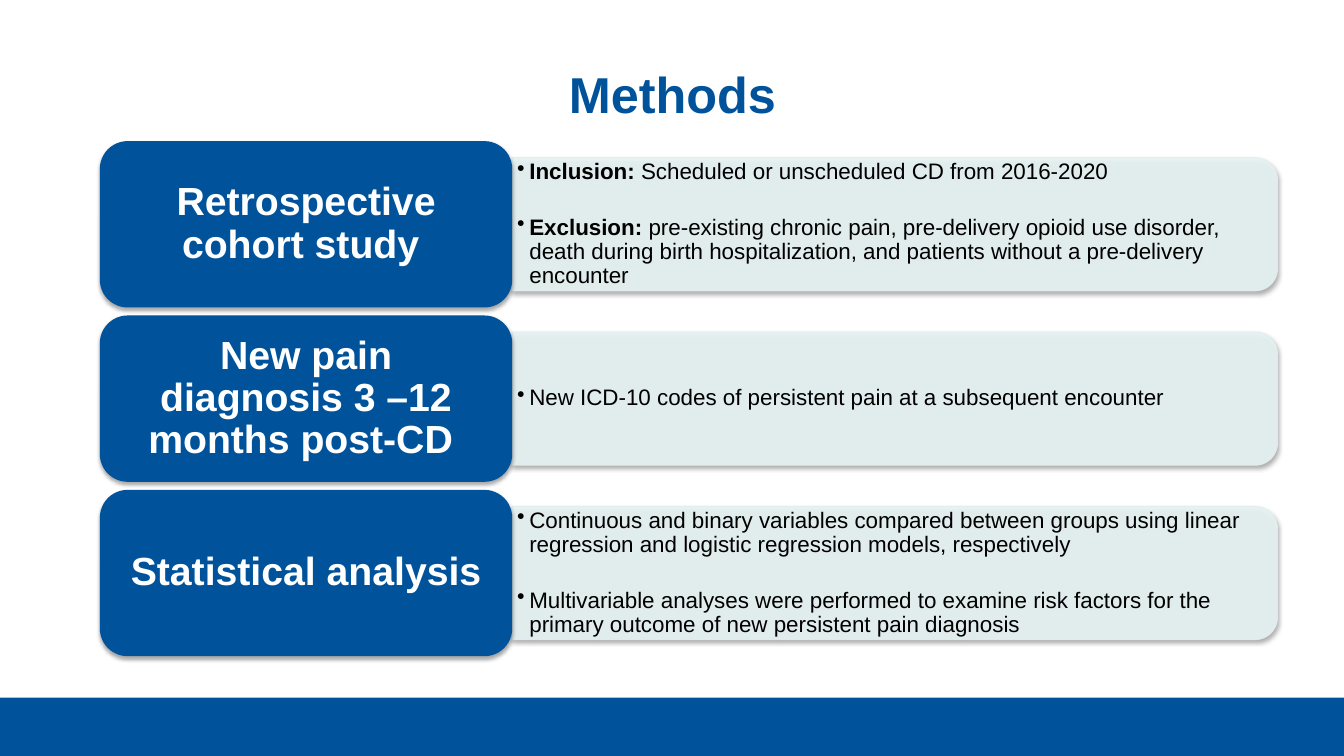
from math import cos, pi, sin

from pptx import Presentation
from pptx.dml.color import RGBColor
from pptx.enum.shapes import MSO_SHAPE
from pptx.enum.text import MSO_ANCHOR, PP_ALIGN
from pptx.oxml import parse_xml
from pptx.oxml.ns import nsdecls, qn
from pptx.util import Inches, Pt

COLORS = {
    "blue": "00539B",
    "panel": "E7F3F4",
    "edge": "E2EEEF",
    "white": "FFFFFF",
    "black": "000000",
}

# Each row: label, then bullets as (bold lead, text)
ROWS = [
    ("Retrospective cohort study ", [
        ("Inclusion: ", "Scheduled or unscheduled CD from 2016-2020"),
        ("Exclusion: ", "pre-existing chronic pain, pre-delivery opioid use disorder, "
                        "death during birth hospitalization, and patients without "
                        "a pre-delivery encounter"),
    ]),
    ("New pain diagnosis 3 –12 months post-CD ", [
        ("", "New ICD-10 codes of persistent pain at a subsequent encounter"),
    ]),
    ("Statistical analysis", [
        ("", "Continuous and binary variables compared between groups using linear "
             "regression and logistic regression models, respectively"),
        ("", "Multivariable analyses were performed to examine risk factors for "
             "the primary outcome of new persistent pain diagnosis"),
    ]),
]

LEFT, TOP, PITCH = 0.99, 1.4, 1.73
LABEL_W, LABEL_H = 4.09, 1.65
PANEL_W, PANEL_H, RADIUS = 7.59, 1.32, 0.22


def apply(obj, formats):
    for name, value in formats.items():
        setattr(obj, name, value)


class SlideBuilder:
    def __init__(self, prs):
        self.slide = prs.slides.add_slide(prs.slide_layouts[5])
        self.font = "Arial"

    def color(self, name):
        return RGBColor.from_string(COLORS[name])

    def run(self, p, text, size, color, bold=False):
        r = p.add_run()
        r.text = text
        apply(r.font, {"name": self.font, "size": Pt(size), "bold": bold})
        r.font.color.rgb = self.color(color)

    def frame(self, sp, insets):
        tf = sp.text_frame
        sides = ("margin_left", "margin_top", "margin_right", "margin_bottom")
        apply(tf, {"word_wrap": True, "vertical_anchor": MSO_ANCHOR.MIDDLE})
        apply(tf, dict(zip(sides, map(Inches, insets))))
        return tf

    def paint(self, sp, fill, edge=None, alpha=None):
        sp.shadow.inherit = False
        sp.fill.solid()
        sp.fill.fore_color.rgb = self.color(fill)
        if edge:
            sp.line.color.rgb = self.color(edge)
            sp.line.width = Pt(0.75)
        else:
            sp.line.fill.background()
        if alpha:
            for clr in sp._element.spPr.iter(qn("a:srgbClr")):
                clr.append(parse_xml(f'<a:alpha {nsdecls("a")} val="{alpha * 1000}"/>'))

    def drop_shadow(self, sp):
        sp._element.spPr.find(qn("a:effectLst")).append(parse_xml(
            f'<a:outerShdw {nsdecls("a")} blurRad="{Pt(3.1)}" dist="{Pt(1.8)}" '
            f'dir="5400000" rotWithShape="0"><a:srgbClr val="{COLORS["black"]}">'
            '<a:alpha val="35000"/></a:srgbClr></a:outerShdw>'))

    def title(self, text):
        sp = self.slide.shapes.title
        apply(sp, {"left": Inches(0.56), "top": Inches(0.3),
                   "width": Inches(12.22), "height": Inches(1.25)})
        tf = self.frame(sp, (0.1, 0.05, 0.1, 0.05))
        p = tf.paragraphs[0]
        p.alignment = PP_ALIGN.CENTER
        self.run(p, text, 36, "blue", True)

    def box(self, kind, x, y, w, h):
        sp = self.slide.shapes.add_shape(kind, *map(Inches, (x, y, w, h)))
        self.paint(sp, "blue")
        return sp

    def label(self, text, x, y):
        sp = self.box(MSO_SHAPE.ROUNDED_RECTANGLE, x, y, LABEL_W, LABEL_H)
        self.drop_shadow(sp)
        p = self.frame(sp, (0.19, 0.13, 0.19, 0.13)).paragraphs[0]
        apply(p, {"alignment": PP_ALIGN.CENTER, "line_spacing": 0.9})
        self.run(p, text, 28, "white", True)

    def panel(self, bullets, x, y):
        # Square left corners, rounded right corners
        right, bottom = x + PANEL_W, y + PANEL_H
        points = [(x, y)]
        for cy, start in ((y + RADIUS, -pi / 2), (bottom - RADIUS, 0)):
            for step in range(13):
                angle = start + step * pi / 24
                points.append((right - RADIUS + RADIUS * cos(angle),
                               cy + RADIUS * sin(angle)))
        points.append((x, bottom))
        points = [(Inches(px), Inches(py)) for px, py in points]
        outline = self.slide.shapes.build_freeform(*points[0])
        outline.add_line_segments(points[1:], close=True)
        sp = outline.convert_to_shape()
        self.paint(sp, "panel", "edge", 90)
        self.drop_shadow(sp)

        # Bulleted text
        tf = self.frame(sp, (0.05, 0.09, 0.11, 0.09))
        for i, (lead, text) in enumerate(bullets):
            p = tf.add_paragraph() if i else tf.paragraphs[0]
            pPr = p._p.get_or_add_pPr()
            pPr.set("marL", str(Inches(0.12)))
            pPr.set("indent", str(-Inches(0.12)))
            pPr.append(parse_xml(f'<a:buChar {nsdecls("a")} char="•"/>'))
            apply(p, {"level": 1, "alignment": PP_ALIGN.LEFT, "line_spacing": 0.9,
                      "space_before": Pt(22.5 if i else 0)})
            if lead:
                self.run(p, lead, 16, "black", True)
            self.run(p, text, 16, "black")


def main():
    prs = Presentation()
    prs.slide_width, prs.slide_height = Inches(13.33), Inches(7.5)
    s = SlideBuilder(prs)

    # Footer band and title
    s.box(MSO_SHAPE.RECTANGLE, 0, 6.92, 13.33, 0.58)
    s.title("Methods")

    # Method rows
    for i, (label, bullets) in enumerate(ROWS):
        y = TOP + i * PITCH
        s.panel(bullets, LEFT + LABEL_W, y + (LABEL_H - PANEL_H) / 2)
        s.label(label, LEFT, y)

    prs.save("out.pptx")


if __name__ == "__main__":
    main()
